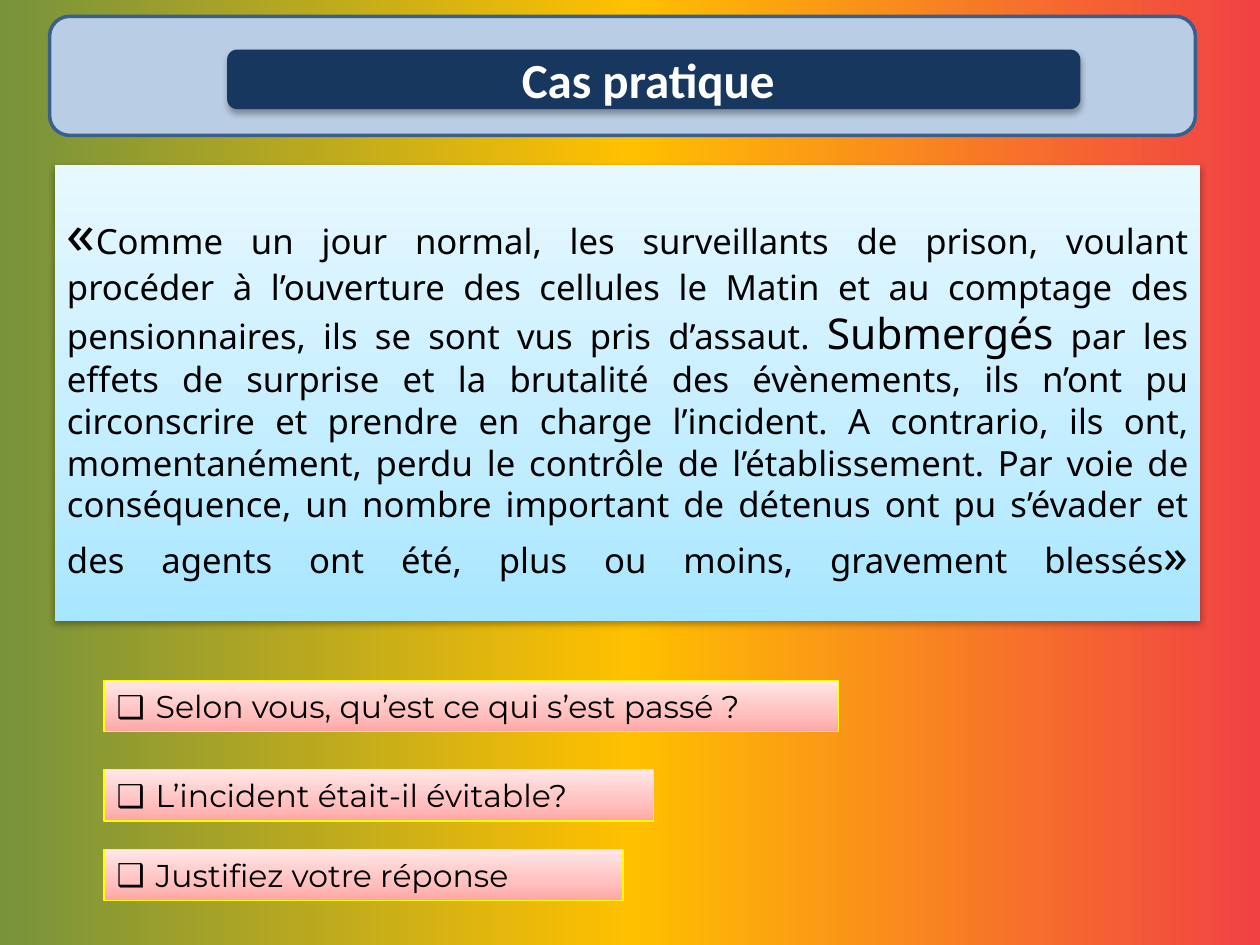
import pptx
import pptx.dml.color
import pptx.enum.shapes
import pptx.enum.text
import pptx.oxml
import pptx.oxml.ns
import pptx.util

Cm = pptx.util.Cm
Pt = pptx.util.Pt
RGB = pptx.dml.color.RGBColor
SHAPES = pptx.enum.shapes.MSO_SHAPE
ALIGN = pptx.enum.text.PP_ALIGN
ANCHOR = pptx.enum.text.MSO_ANCHOR
NAMESPACE = pptx.oxml.ns.nsdecls("a")

BLACK = RGB(0x00, 0x00, 0x00)
WHITE = RGB(0xFF, 0xFF, 0xFF)
PALE_BLUE = RGB(0xB9, 0xCD, 0xE5)
EDGE_BLUE = RGB(0x3A, 0x5F, 0x8C)
NAVY = RGB(0x17, 0x37, 0x5E)
YELLOW = RGB(0xFF, 0xFF, 0x00)
FLAG = [(0, RGB(0x77, 0x93, 0x3C)), (50, RGB(0xFF, 0xC0, 0x00)), (100, RGB(0xF1, 0x41, 0x45))]
SKY = [(0, RGB(0xA7, 0xE6, 0xFF)), (35, RGB(0xC1, 0xED, 0xFF)), (100, RGB(0xE7, 0xF8, 0xFF))]
ROSE = [(0, RGB(0xFF, 0xA6, 0xA5)), (35, RGB(0xFF, 0xC0, 0xBF)), (100, RGB(0xFF, 0xE7, 0xE7))]

HEADING = "Cas pratique "
STORY = [
    ("«", 32.4),
    ("Comme un jour normal, les surveillants de prison, voulant procéder à l’ouverture "
     "des cellules le Matin et au comptage des pensionnaires, ils se sont vus pris "
     "d’assaut. ", 19.8),
    ("Submergés", 24.3),
    (" par les effets de surprise et la brutalité des évènements, ils n’ont pu "
     "circonscrire et prendre en charge l’incident. A contrario, ils ont, momentanément, "
     "perdu le contrôle de l’établissement. Par voie de conséquence, un nombre important "
     "de détenus ont pu s’évader et des agents ont été, plus ou moins, gravement blessés",
     19.8),
    ("»", 27.9),
]
QUESTIONS = [
    ("Selon vous, qu’est ce qui s’est passé ?", 13.72, 14.81),
    ("L’incident était-il évitable?", 15.52, 11.08),
    ("Justifiez votre réponse", 17.12, 10.46),
]

HEADING_FONT = {"name": "Calibri", "size": Pt(28), "bold": True}
STORY_FONT = {"name": "Noto Sans", "bold": False}
QUESTION_FONT = {"name": "Montserrat", "size": Pt(18)}
STORY_BOX = {"left": Cm(1.1), "top": Cm(3.33), "width": Cm(23.1), "height": Cm(9.19)}
STORY_FRAME = {"word_wrap": True, "vertical_anchor": ANCHOR.TOP, "margin_top": Cm(0.65),
               "margin_left": Cm(0.25), "margin_right": Cm(0.25),
               "auto_size": pptx.enum.text.MSO_AUTO_SIZE.NONE}


def apply(target, values):
    for key, value in values.items():
        setattr(target, key, value)


def add_text(paragraph, text, font, color):
    run = paragraph.add_run()
    run.text = text
    apply(run.font, font)
    run.font.color.rgb = color


def fill_gradient(fill, owner, stops, angle):
    fill.gradient()
    fill.gradient_angle = angle
    stop_list = owner.xpath(".//a:gsLst")[0]
    for old_stop in list(stop_list):
        stop_list.remove(old_stop)
    for percent, color in stops:
        stop_list.append(pptx.oxml.parse_xml(
            f'<a:gs {NAMESPACE} pos="{percent * 1000}"><a:srgbClr val="{color}"/></a:gs>'))


def add_shadow(shape):
    shape.shadow.inherit = False
    shape.element.spPr.xpath("a:effectLst")[0].append(pptx.oxml.parse_xml(
        f'<a:outerShdw {NAMESPACE} blurRad="{Pt(3.5)}" dist="{Pt(2.2)}" dir="5400000" '
        'rotWithShape="0"><a:srgbClr val="000000"><a:alpha val="32000"/></a:srgbClr>'
        '</a:outerShdw>'))


def add_panel(slide, kind, left, top, width, height, edge=None, edge_width=0):
    panel = slide.shapes.add_shape(kind, Cm(left), Cm(top), Cm(width), Cm(height))
    panel.shadow.inherit = False
    if edge is None:
        panel.line.fill.background()
    else:
        panel.line.color.rgb = edge
        panel.line.width = Pt(edge_width)
    return panel


def add_heading(slide):
    banner = add_panel(slide, SHAPES.ROUNDED_RECTANGLE, 1, 0.33, 23.1, 2.4, EDGE_BLUE, 2)
    plate = add_panel(slide, SHAPES.ROUNDED_RECTANGLE, 4.58, 1, 17.2, 1.2)
    for panel, color in ((banner, PALE_BLUE), (plate, NAVY)):
        panel.fill.solid()
        panel.fill.fore_color.rgb = color
    add_shadow(plate)
    plate.text_frame.vertical_anchor = ANCHOR.MIDDLE
    paragraph = plate.text_frame.paragraphs[0]
    paragraph.alignment = ALIGN.CENTER
    add_text(paragraph, HEADING, HEADING_FONT, WHITE)


def add_story(slide):
    story = slide.shapes.title
    apply(story, STORY_BOX)
    fill_gradient(story.fill, story.element, SKY, 90)
    add_shadow(story)
    apply(story.text_frame, STORY_FRAME)
    paragraph = story.text_frame.paragraphs[0]
    apply(paragraph, {"alignment": ALIGN.JUSTIFY, "line_spacing": 1.0})
    for text, size in STORY:
        add_text(paragraph, text, {**STORY_FONT, "size": Pt(size)}, BLACK)
    paragraph.add_line_break()


def add_question(slide, text, top, width):
    question = add_panel(slide, SHAPES.RECTANGLE, 2.1, top, width, 1.03, YELLOW, 0.75)
    fill_gradient(question.fill, question.element, ROSE, 90)
    paragraph = question.text_frame.paragraphs[0]
    paragraph.alignment = ALIGN.LEFT
    add_text(paragraph, text, QUESTION_FONT, BLACK)
    properties = paragraph._p.get_or_add_pPr()
    properties.set("marL", str(Cm(0.79)))
    properties.set("indent", str(-Cm(0.79)))
    for bullet in ('buFont {} typeface="Noto Sans"', 'buChar {} char="❑"'):
        properties.append(pptx.oxml.parse_xml(f"<a:{bullet.format(NAMESPACE)}/>"))


def main():
    deck = pptx.Presentation()
    apply(deck, {"slide_width": Cm(25.4), "slide_height": Cm(19.05)})
    slide = deck.slides.add_slide(deck.slide_layouts.get_by_name("Title Only"))
    fill_gradient(slide.background.fill, slide.element, FLAG, 0)
    add_heading(slide)
    add_story(slide)
    for text, top, width in QUESTIONS:
        add_question(slide, text, top, width)
    deck.save("out.pptx")


if __name__ == "__main__":
    main()
